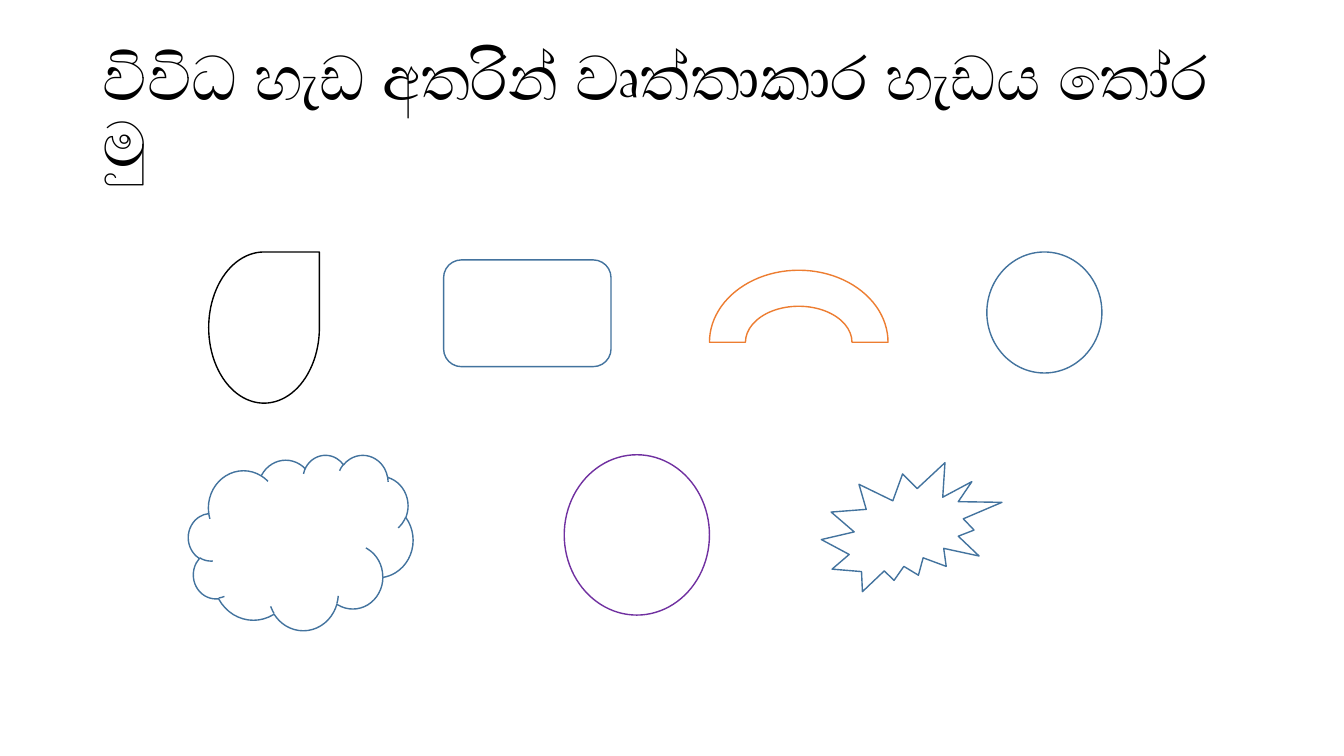
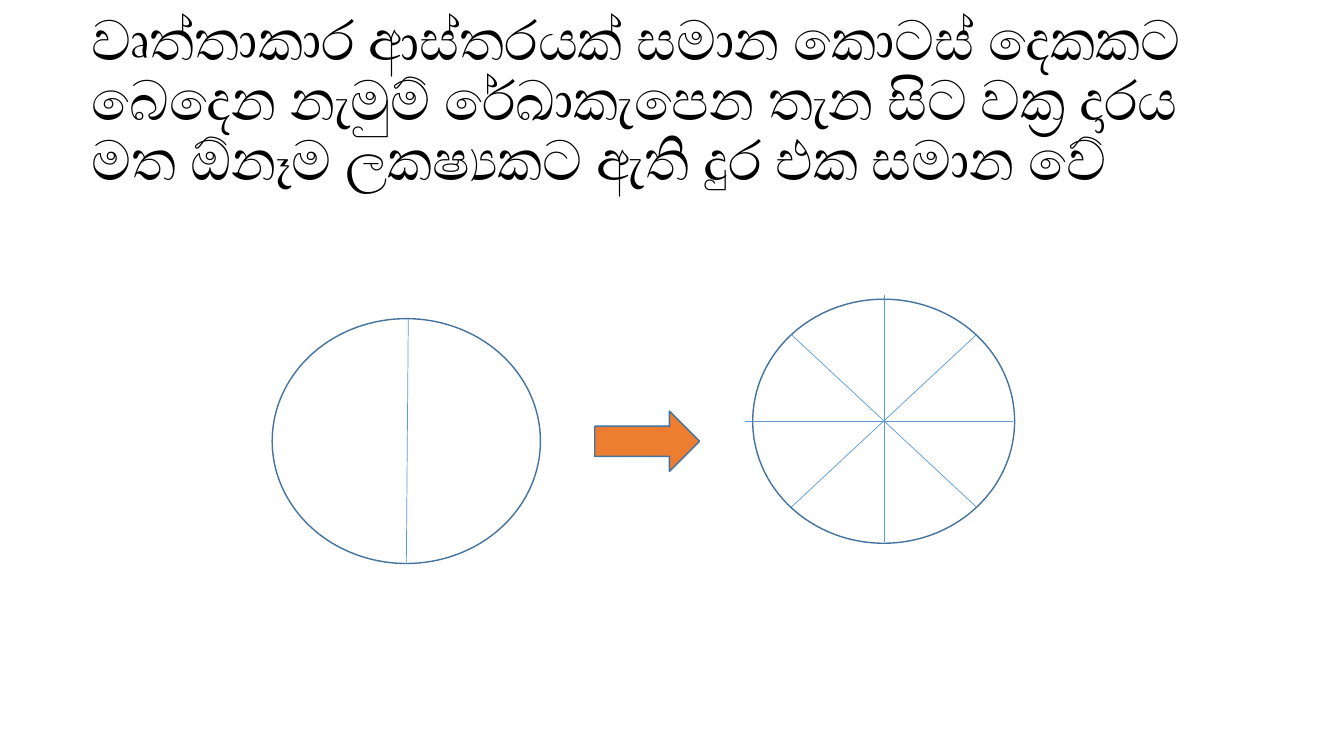
"""Builds two slides on finding and folding circles."""
from pptx import Presentation
from pptx import util as u
from pptx.dml.color import RGBColor
from pptx.enum import shapes, text
from pptx.oxml.ns import qn
from lxml import etree

BLACK = RGBColor(0x00, 0x00, 0x00)
WHITE = RGBColor(0xFF, 0xFF, 0xFF)
BLUE = RGBColor(0x43, 0x73, 0x9E)
SKY = RGBColor(0x5B, 0x9B, 0xD5)
ORANGE = RGBColor(0xED, 0x7D, 0x31)
PURPLE = RGBColor(0x70, 0x30, 0xA0)
FONT = "Calibri"
KIND = shapes.MSO_SHAPE
HARD = chr(160)
JOIN = chr(8205)


def write(frame, words, size=44, color=BLACK, font=FONT, space=0.9):
    para = frame.paragraphs[0]
    para.line_spacing = space
    para.alignment = text.PP_ALIGN.LEFT
    run = para.add_run()
    run.text = words
    run.font.size = u.Pt(size)
    run.font.name = font
    run.font.color.rgb = color


class Deck:
    def __init__(self):
        self.show = Presentation()
        self.show.slide_width = u.Cm(33.87)
        self.show.slide_height = u.Cm(19.05)
        self.slide = None

    def page(self):
        self.slide = self.show.slides.add_slide(self.show.slide_layouts[6])

    def title(self, words, left, top, **style):
        box = self.slide.shapes.add_textbox(
            u.Cm(left), u.Cm(top), u.Cm(29.21), u.Cm(3.68))
        frame = box.text_frame
        frame.word_wrap = True
        frame.vertical_anchor = text.MSO_ANCHOR.MIDDLE
        write(frame, words, **style)

    def shape(self, kind, left, top, width, height, line=BLUE, fill=WHITE):
        item = self.slide.shapes.add_shape(
            kind, u.Cm(left), u.Cm(top), u.Cm(width), u.Cm(height))
        item.shadow.inherit = False
        item.fill.solid()
        item.fill.fore_color.rgb = fill
        item.line.color.rgb = line
        item.line.width = u.Pt(1)

    def fold(self, *ends):
        item = self.slide.shapes.add_connector(
            shapes.MSO_CONNECTOR.STRAIGHT, *map(u.Cm, ends))
        item.line.color.rgb = SKY
        item.line.width = u.Pt(0.5)
        props = item._element.find(qn("p:spPr"))
        etree.SubElement(props, qn("a:effectLst"))


def choose(deck):
    deck.page()
    words = "විවිධ හැඩ අතරින් වෘත්තාකාර හැඩය තෝරමු"
    deck.title(words.replace(" ", HARD), 2.34, 1.02)
    deck.shape(KIND.TEAR, 5.26, 6.35, 2.79, 3.81, line=BLACK)
    deck.shape(KIND.FLOWCHART_ALTERNATE_PROCESS, 11.18, 6.55, 4.22, 2.69)
    deck.shape(KIND.BLOCK_ARC, 17.88, 6.81, 4.5, 3.63, line=ORANGE)
    deck.shape(KIND.OVAL, 24.87, 6.35, 2.9, 3.05)
    deck.shape(KIND.CLOUD, 4.75, 11.46, 5.66, 4.42)
    deck.shape(KIND.EXPLOSION2, 20.7, 11.66, 4.55, 3.25)
    deck.shape(KIND.OVAL, 14.22, 11.46, 3.66, 4.04, line=PURPLE)


def halve(deck):
    deck.page()
    words = ("වෘත්තාකාර ආස්තරයක් සමාන කොටස් දෙකකට බෙදෙන නැමුම් "
             "රේඛාකැපෙන තැන සිට වක්|ර දාරය මත ඕනෑම ලකෂ්|යකට "
             "ඇති දුර එක සමාන වේ")
    deck.title(words.replace("|", JOIN), 2.06, 0.74, size=39.6)
    deck.shape(KIND.FLOWCHART_CONNECTOR, 18.97, 7.54, 6.6, 6.15)
    deck.shape(KIND.FLOWCHART_CONNECTOR, 6.86, 8.03, 6.76, 6.17)
    deck.fold(10.29, 8.03, 10.24, 14.2)
    deck.fold(22.28, 7.44, 22.28, 13.67)
    deck.fold(18.77, 10.62, 25.53, 10.62)
    west, east, north, south = 19.94, 24.61, 8.43, 12.78
    deck.fold(west, north, east, south)
    deck.fold(east, north, west, south)
    deck.shape(KIND.RIGHT_ARROW, 14.99, 10.36, 2.64, 1.52, fill=ORANGE)


def main():
    deck = Deck()
    choose(deck)
    halve(deck)
    deck.show.save("out.pptx")


if __name__ == "__main__":
    main()
